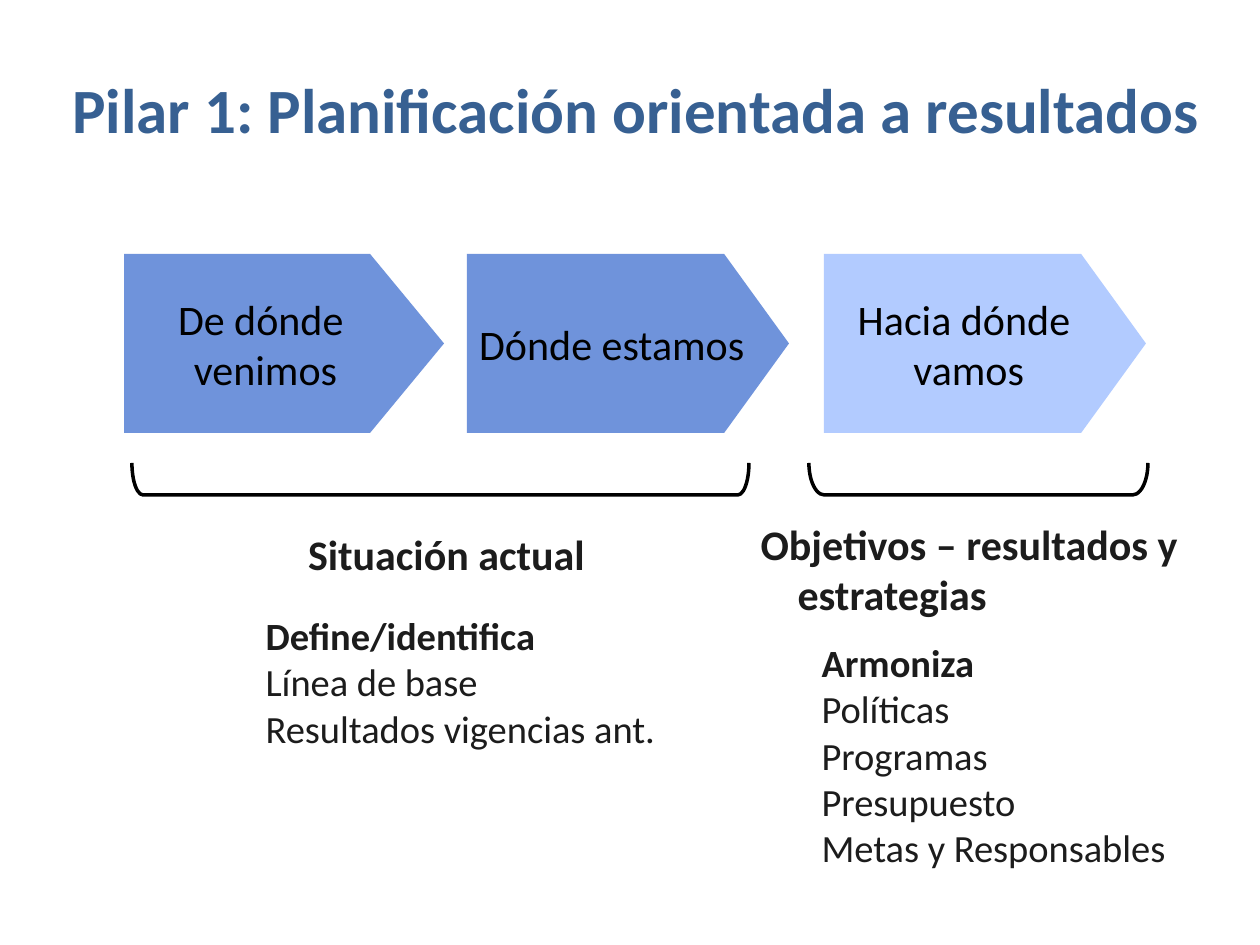
from dataclasses import dataclass

from lxml.etree import SubElement
from pptx import Presentation
from pptx.dml.color import RGBColor
from pptx.enum.shapes import MSO_SHAPE as Preset
from pptx.enum.text import MSO_ANCHOR as Anchor, MSO_AUTO_SIZE as AutoSize, PP_ALIGN as Align
from pptx.oxml.ns import qn
from pptx.util import Pt

EMU_PER_PX = 914400 // 126
FONT = "Calibri"
BLACK, INK, TITLE_BLUE = "000000", "1C1C1C", "376092"
ARROW_TOP, ARROW_HEIGHT = 254, 179
BRACKET_TOP, BRACKET_DEPTH = 463, 32


@dataclass(frozen=True)
class Stage:
    lines: tuple[str, ...]
    left: int
    width: int
    point: float
    color: str
    opacity: int


@dataclass(frozen=True)
class Bracket:
    left: int
    width: int
    curve: float


@dataclass(frozen=True)
class TextBlock:
    """Text for one placeholder; the first line is bold."""
    placeholder: int
    lines: tuple[str, ...]
    box: tuple[int, int, int, int]
    size: int
    color: str = INK
    align: Align = Align.LEFT
    hanging: int = 0


STAGES = (
    Stage(("De dónde ", "venimos"), 124, 320, 0.413, "3366CC", 70),
    Stage(("Dónde estamos",), 467, 322, 0.362, "3366CC", 70),
    Stage(("Hacia dónde ", "vamos"), 824, 322, 0.362, "6699FF", 50),
)
BRACKETS = (Bracket(132, 617, 0.35), Bracket(809, 339, 0.483))
TEXT_BLOCKS = (
    TextBlock(0, ("Pilar 1: Planificación orientada a resultados",),
              (53, 64, 1166, 90), 36, TITLE_BLUE, Align.CENTER),
    TextBlock(1, ("Situación actual",), (184, 522, 525, 64), 24, align=Align.CENTER),
    TextBlock(2, ("Define/identifica", "Línea de base", "Resultados vigencias ant."),
              (253, 606, 417, 246), 22),
    TextBlock(3, ("Objetivos – resultados y estrategias",),
              (748, 512, 466, 115), 24, hanging=37),
    TextBlock(4, ("Armoniza", "Políticas", "Programas", "Presupuesto", "Metas y Responsables"),
              (809, 633, 387, 246), 22),
)


def px(length: float) -> int:
    return round(length * EMU_PER_PX)


def rgb(color: str) -> RGBColor:
    return RGBColor.from_string(color)


def write_lines(frame, lines: tuple[str, ...], size: int, color: str, align: Align) -> None:
    for index, line in enumerate(lines):
        paragraph = frame.paragraphs[0] if index == 0 else frame.add_paragraph()
        paragraph.text = line
        paragraph.alignment = align
        font = paragraph.font
        font.name, font.size = FONT, Pt(size)
        font.color.rgb = rgb(color)


def draw_stage(slide, stage: Stage) -> None:
    arrow = slide.shapes.add_shape(Preset.PENTAGON, px(stage.left), px(ARROW_TOP),
                                   px(stage.width), px(ARROW_HEIGHT))
    arrow.adjustments[0] = stage.point
    arrow.shadow.inherit = False
    arrow.line.fill.background()
    arrow.fill.solid()
    arrow.fill.fore_color.rgb = rgb(stage.color)
    fill_color = arrow.fill._xPr.find(qn("a:solidFill"))[0]
    SubElement(fill_color, qn("a:alpha"), val=str(stage.opacity * 1000))
    frame = arrow.text_frame
    frame.word_wrap = False
    frame.vertical_anchor = Anchor.MIDDLE
    write_lines(frame, stage.lines, 24, BLACK, Align.CENTER)


def draw_bracket(slide, bracket: Bracket) -> None:
    """Turn a left bracket by 270° so that it opens upwards at its place."""
    offset = (bracket.width - BRACKET_DEPTH) / 2
    shape = slide.shapes.add_shape(Preset.LEFT_BRACKET, px(bracket.left + offset),
                                   px(BRACKET_TOP - offset), px(BRACKET_DEPTH),
                                   px(bracket.width))
    shape.rotation = 270
    shape.adjustments[0] = bracket.curve
    shape.shadow.inherit = False
    shape.fill.background()
    shape.line.color.rgb = rgb(BLACK)
    shape.line.width = Pt(2)


def fill_placeholder(slide, block: TextBlock) -> None:
    holder = slide.placeholders[block.placeholder]
    holder.left, holder.top, holder.width, holder.height = map(px, block.box)
    frame = holder.text_frame
    frame.word_wrap = True
    frame.auto_size = AutoSize.NONE
    frame.vertical_anchor = Anchor.TOP
    write_lines(frame, block.lines, block.size, block.color, block.align)
    for index, paragraph in enumerate(frame.paragraphs):
        paragraph.font.bold = index == 0
        paragraph.space_before = Pt(0)
        properties = paragraph._p.get_or_add_pPr()
        properties.set("marL", str(px(block.hanging)))
        properties.set("indent", str(-px(block.hanging)))
        bullet_none = properties.makeelement(qn("a:buNone"))
        properties.find(qn("a:defRPr")).addprevious(bullet_none)


def main() -> None:
    deck = Presentation()
    deck.slide_width, deck.slide_height = px(1260), px(945)
    comparison_layout = deck.slide_layouts[4]
    slide = deck.slides.add_slide(comparison_layout)
    for block in TEXT_BLOCKS:
        fill_placeholder(slide, block)
    for stage in STAGES:
        draw_stage(slide, stage)
    for bracket in BRACKETS:
        draw_bracket(slide, bracket)
    deck.save("out.pptx")


if __name__ == "__main__":
    main()
